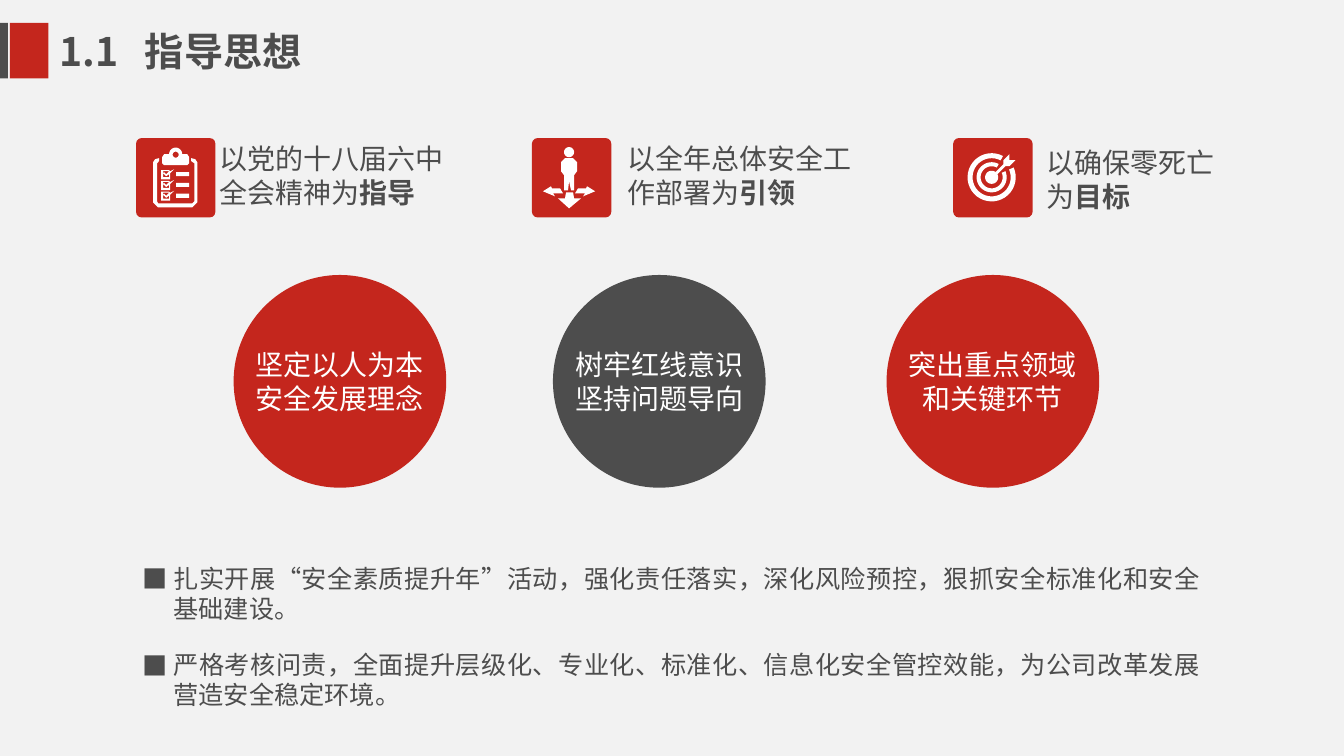
from math import cos, radians, sin

from lxml.etree import SubElement
from pptx import Presentation
from pptx.dml.color import RGBColor
from pptx.enum.shapes import MSO_SHAPE as Preset
from pptx.enum.text import MSO_ANCHOR as Anchor, MSO_AUTO_SIZE as AutoSize, PP_ALIGN as Align
from pptx.oxml.ns import qn
from pptx.util import Cm, Pt

RED = RGBColor(0xC4, 0x26, 0x1D)
GREY = RGBColor(0x4D, 0x4D, 0x4D)
WHITE = RGBColor(0xFF, 0xFF, 0xFF)
PAPER = RGBColor(0xF2, 0xF2, 0xF2)
FONT = "Noto Sans CJK SC"
TILE_UNITS = 79

PRINCIPLES = [
    ("以党的十八届六中全会精神为", "指导"),
    ("以全年总体安全工作部署为", "引领"),
    ("以确保零死亡为", "目标"),
]
CONCEPTS = [
    (5.89, "坚定以人为本\n安全发展理念", RED),
    (13.94, "树牢红线意识\n坚持问题导向", GREY),
    (22.35, "突出重点领域\n和关键环节", RED),
]
MEASURES = [
    "扎实开展“安全素质提升年”活动，强化责任落实，深化风险预控，狠抓安全标准化和安全基础建设。",
    "严格考核问责，全面提升层级化、专业化、标准化、信息化安全管控效能，为公司改革发展营造安全稳定环境。",
]


def arc(x, y, radius, start=0, end=360):
    """Return points along an arc, with angles in degrees clockwise from the right."""
    angles = [radians(start + (end - start) * i / 36) for i in range(37)]
    return [(x + radius * cos(a), y + radius * sin(a)) for a in angles]


def clipboard_outlines():
    """Return the outlines of a checklist on a clipboard."""
    board = [(23, 20), (19, 21), (17, 24), (17, 64), (22, 69), (56, 69), (61, 64), (61, 24),
             (59, 21), (55, 20), (55, 23), (58, 25), (58, 63), (56, 65), (22, 65), (21, 63),
             (21, 25), (23, 23)]
    clip = [(28, 16), (26, 19), (26, 25), (28, 27), (51, 27), (53, 25), (53, 19), (51, 16)]
    clip += arc(39.5, 16, 6.5, 0, -180)
    checked_line = [
        [(34, 33), (33, 32), (25, 32), (25, 41), (34, 41), (34, 35), (38, 31)],
        [(27, 33), (33, 33), (30, 36), (28, 34), (27, 35), (30, 38), (33, 36), (33, 39), (27, 39)],
        [(40, 34), (53, 34), (53, 38), (40, 38)],
    ]
    checks = [[(x, y + row * 10.7) for x, y in part] for row in range(3) for part in checked_line]
    return [board, clip, arc(39.5, 16.5, 3)] + checks


def leader_outlines():
    """Return the outlines of a person with arrows to three sides."""
    body = [(42, 37), (42, 52), (39, 52), (37, 43), (36, 52), (32, 52), (32, 37), (29, 33),
            (29, 24), (33, 20), (41, 20), (45, 24), (45, 33)]
    right = [(46, 50), (43, 55), (53, 55), (51, 58), (63, 53), (55, 48), (54, 50)]
    left = [(74 - x, y) for x, y in right]
    down = [(34, 54), (41, 54), (42, 60), (49, 60), (37, 70), (26, 60), (33, 60)]
    return [arc(37, 14, 5), body, right, left, down]


def target_outlines():
    """Return the outlines of a target hit by an arrow."""
    x, y = 38.3, 39
    rings = [arc(x, y, outer, -24, 298) + arc(x, y, inner, 298, -24)
             for outer, inner in ((24, 19), (15, 11))]
    arrow = [(42, 34), (50, 26), (50, 22), (56, 16), (56, 22), (62, 22), (56, 28), (52, 28), (44, 36)]
    return rings + [arc(x, y, 6.5), arrow]


def paint(shape, color):
    """Give a shape a plain fill without line or shadow."""
    shape.shadow.inherit = False
    shape.fill.solid()
    shape.fill.fore_color.rgb = color
    shape.line.fill.background()
    return shape


def place(shape, left, top, width, height):
    """Move a placeholder to a box."""
    shape.left, shape.top, shape.width, shape.height = left, top, width, height


def format_paragraph(paragraph, size, color, align=Align.LEFT):
    """Set alignment, line pitch and the font of every run."""
    paragraph.alignment = align
    paragraph.line_spacing = Pt(round(size * 1.21, 1))
    paragraph.space_before = Pt(0)
    for run in paragraph.runs:
        run.font.size = Pt(size)
        run.font.name = FONT
        run.font.color.rgb = color
        SubElement(run.font._element, qn("a:ea"), typeface=FONT)


def add_heading(slide, left, top, width, height):
    """Place the two edge bars and the slide title."""
    for bar_left, bar_width, color in ((0, 0.2, GREY), (0.25, 0.97, RED)):
        paint(slide.shapes.add_shape(Preset.RECTANGLE, left + Cm(bar_left), top,
                                     Cm(bar_width), height), color)
    title = slide.shapes.title
    place(title, left + Cm(1.24), top, width, height)
    frame = title.text_frame
    frame.text = "1.1\t指导思想"
    frame.auto_size = AutoSize.NONE
    frame.vertical_anchor = Anchor.MIDDLE
    heading = frame.paragraphs[0]
    format_paragraph(heading, 28, GREY)
    for run in heading.runs:
        run.font.bold = True
    tabs = SubElement(heading._p.get_or_add_pPr(), qn("a:tabLst"))
    SubElement(tabs, qn("a:tab"), pos=str(Cm(2.16)), algn="l")


def add_principle(slide, left, top, tile, outlines, label_box, wording):
    """Place an icon tile and the principle beside it."""
    square = paint(slide.shapes.add_shape(Preset.ROUNDED_RECTANGLE, left, top, tile, tile), RED)
    square.adjustments[0] = 0.07
    unit = tile / TILE_UNITS
    scaled = [[(x * unit, y * unit) for x, y in outline] for outline in outlines]
    builder = slide.shapes.build_freeform(*scaled[0][0])
    builder.add_line_segments(scaled[0][1:])
    for outline in scaled[1:]:
        builder.move_to(*outline[0])
        builder.add_line_segments(outline[1:])
    paint(builder.convert_to_shape(left, top), WHITE)

    offset, drop, width = label_box
    label = slide.shapes.add_textbox(left + Cm(offset), top + Cm(drop), Cm(width), Cm(1.96))
    label.text_frame.word_wrap = True
    principle = label.text_frame.paragraphs[0]
    for part in wording:
        principle.add_run().text = part
    format_paragraph(principle, 20, GREY)
    principle.runs[1].font.bold = True


def add_concept(slide, left, top, diameter, wording, color):
    """Place a disc with its two-line concept."""
    disc = paint(slide.shapes.add_shape(Preset.OVAL, left, top, diameter, diameter), color)
    frame = disc.text_frame
    frame.text = wording
    frame.word_wrap = False
    frame.vertical_anchor = Anchor.MIDDLE
    for line in frame.paragraphs:
        format_paragraph(line, 20, WHITE, Align.CENTER)


def add_measures(slide, left, top, width, height):
    """Place the bulleted measures in the body placeholder."""
    body = slide.placeholders[1]
    place(body, left, top, width, height)
    frame = body.text_frame
    frame.text = "\n".join(MEASURES)
    frame.auto_size = AutoSize.NONE
    frame.vertical_anchor = Anchor.TOP
    for measure in frame.paragraphs:
        format_paragraph(measure, 18, GREY, Align.JUSTIFY)
        measure.space_after = Pt(18)
        properties = measure._p.get_or_add_pPr()
        properties.set("marL", str(Cm(0.79)))
        properties.set("indent", str(-Cm(0.79)))
        SubElement(properties, qn("a:buFont"), typeface=FONT)
        SubElement(properties, qn("a:buChar"), char="■")


def main():
    """Build the slide and save it."""
    deck = Presentation()
    deck.slide_width, deck.slide_height = Cm(33.88), Cm(19.05)
    slide = deck.slides.add_slide(deck.slide_layouts[1])
    slide.background.fill.solid()
    slide.background.fill.fore_color.rgb = PAPER

    add_heading(slide, Cm(0), Cm(0.58), Cm(8.3), Cm(1.4))
    icons = [clipboard_outlines(), leader_outlines(), target_outlines()]
    tile_lefts = [3.43, 13.41, 24.03]
    label_boxes = [(1.85, -0.05, 6.6), (2.16, -0.05, 6.6), (2.11, 0.05, 4.95)]
    for left, icon, label_box, wording in zip(tile_lefts, icons, label_boxes, PRINCIPLES):
        add_principle(slide, Cm(left), Cm(3.48), Cm(2), icon, label_box, wording)
    for left, wording, color in CONCEPTS:
        add_concept(slide, Cm(left), Cm(6.93), Cm(5.36), wording, color)
    add_measures(slide, Cm(3.33), Cm(14.05), Cm(27.2), Cm(3.96))
    deck.save("out.pptx")


if __name__ == "__main__":
    main()
